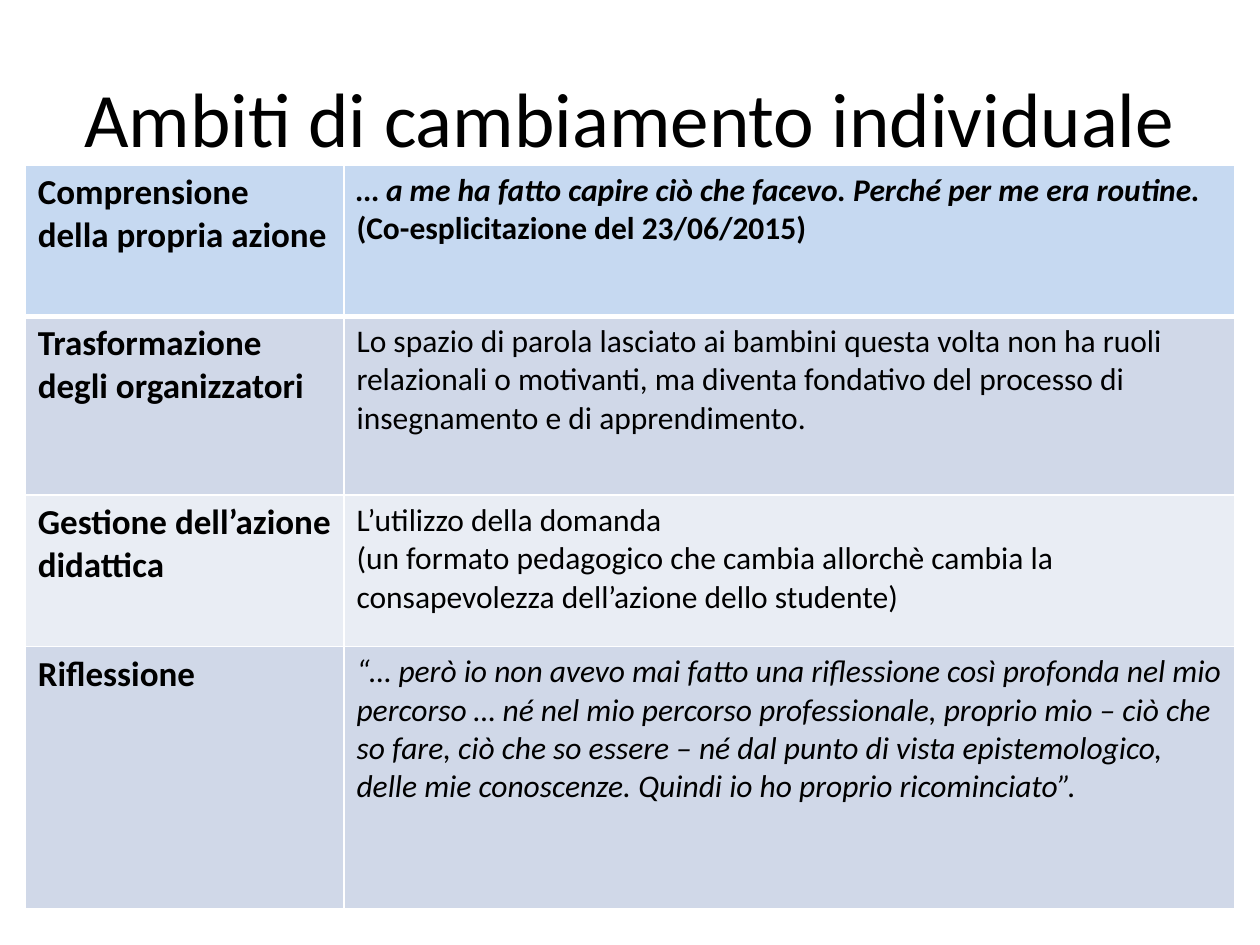
import pptx
import pptx.dml.color
import pptx.enum.text
import pptx.oxml
import pptx.oxml.ns
import pptx.util
from pptx.util import Inches

BLACK = pptx.dml.color.RGBColor(0x00, 0x00, 0x00)
WHITE = pptx.dml.color.RGBColor(0xFF, 0xFF, 0xFF)
HEADER_BLUE = pptx.dml.color.RGBColor(0xC6, 0xD9, 0xF1)
BAND_DARK = pptx.dml.color.RGBColor(0xD0, 0xD8, 0xE8)
BAND_LIGHT = pptx.dml.color.RGBColor(0xE9, 0xED, 0xF4)
FONT = "Calibri"

TITLE = "Ambiti di cambiamento individuale"
COLUMN_WIDTHS = (2.53, 7.07)

# Each area: row height, fill, heading, paragraphs made of (text, bold, italic) runs
AREAS = [
    (1.2, HEADER_BLUE, "Comprensione\vdella propria azione", [
        [("… a me ha fatto capire ciò che facevo. Perché per me era routine. ", True, True),
         ("(Co-esplicitazione del 23/06/2015)", True, False)],
    ]),
    (1.42, BAND_DARK, "Trasformazione degli organizzatori", [
        [("Lo spazio di parola lasciato ai bambini questa volta non ha ruoli relazionali "
          "o motivanti, ma diventa fondativo del processo di insegnamento e di "
          "apprendimento.", False, False)],
    ]),
    (1.2, BAND_LIGHT, "Gestione dell’azione didattica", [
        [("L’utilizzo della domanda", False, False)],
        [("(un formato pedagogico che cambia allorchè cambia la consapevolezza "
          "dell’azione dello studente)", False, False)],
    ]),
    (2.08, BAND_DARK, "Riflessione", [
        [("“… però io non avevo mai fatto una riflessione così profonda nel mio percorso "
          "… né nel mio percorso professionale, proprio mio – ciò che so fare, ciò che so "
          "essere – né dal punto di vista epistemologico, delle mie conoscenze. Quindi io "
          "ho proprio ricominciato”.", False, True)],
    ]),
]


def format_run(run, size, bold=False, italic=False):
    run.font.name = FONT
    run.font.size = pptx.util.Pt(size)
    run.font.bold = bold
    run.font.italic = italic
    run.font.color.rgb = BLACK


def style_cell(cell, fill, top, bottom):
    """Fill the cell and draw its white borders; top and bottom are widths in points."""
    properties = cell._tc.get_or_add_tcPr()
    for side, width in (("L", 1), ("R", 1), ("T", top), ("B", bottom)):
        properties.append(pptx.oxml.parse_xml(
            f'<a:ln{side} {pptx.oxml.ns.nsdecls("a")} w="{pptx.util.Pt(width)}">'
            f'<a:solidFill><a:srgbClr val="{WHITE}"/></a:solidFill></a:ln{side}>'))
    cell.fill.solid()
    cell.fill.fore_color.rgb = fill


def add_title(slide):
    title = slide.shapes.add_textbox(Inches(0.5), Inches(0.3), Inches(9), Inches(1.25))
    frame = title.text_frame
    frame.word_wrap = True
    frame.vertical_anchor = pptx.enum.text.MSO_ANCHOR.MIDDLE
    frame.text = TITLE
    frame.paragraphs[0].alignment = pptx.enum.text.PP_ALIGN.CENTER
    format_run(frame.paragraphs[0].runs[0], 44)


def add_areas_table(slide):
    height = sum(area[0] for area in AREAS)
    table = slide.shapes.add_table(
        len(AREAS), len(COLUMN_WIDTHS), Inches(0.2), Inches(1.31),
        Inches(sum(COLUMN_WIDTHS)), Inches(height)).table
    for column, width in zip(table.columns, COLUMN_WIDTHS):
        column.width = Inches(width)

    for index, (row_height, fill, heading, paragraphs) in enumerate(AREAS):
        row = table.rows[index]
        row.height = Inches(row_height)
        heading_cell, detail_cell = row.cells

        heading_cell.text_frame.text = heading
        for run in heading_cell.text_frame.paragraphs[0].runs:
            format_run(run, 20, bold=True)

        detail = detail_cell.text_frame
        for position, runs in enumerate(paragraphs):
            paragraph = detail.add_paragraph() if position else detail.paragraphs[0]
            for text, bold, italic in runs:
                run = paragraph.add_run()
                run.text = text
                format_run(run, 18, bold, italic)

        for cell in (heading_cell, detail_cell):
            style_cell(cell, fill, top=3 if index == 1 else 1, bottom=3 if index == 0 else 1)


def main():
    presentation = pptx.Presentation()
    presentation.slide_width = Inches(10)
    presentation.slide_height = Inches(7.5)
    slide = presentation.slides.add_slide(presentation.slide_layouts[6])
    add_title(slide)
    add_areas_table(slide)
    presentation.save("out.pptx")


if __name__ == "__main__":
    main()
